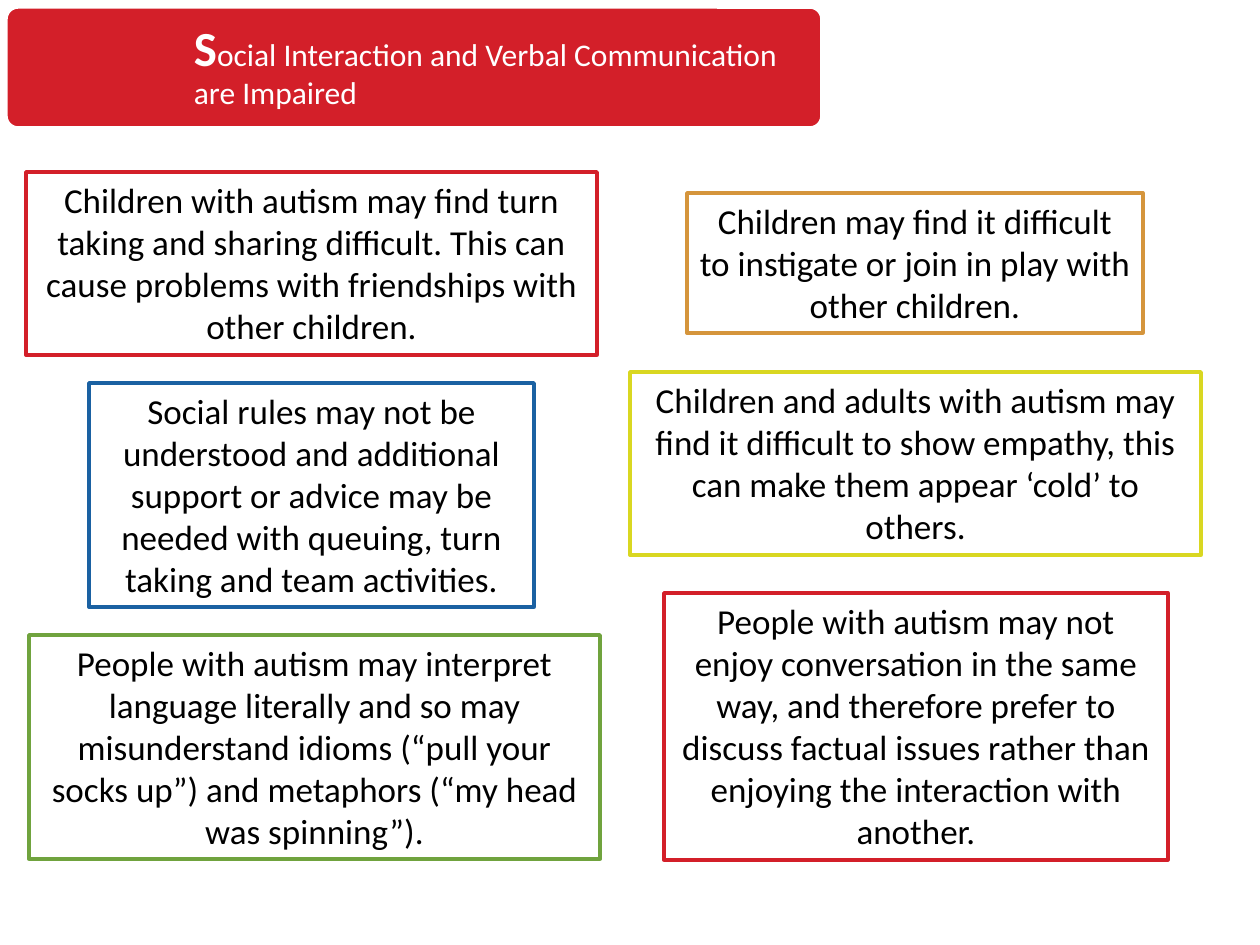
from typing import NamedTuple

from pptx import Presentation
from pptx.dml.color import RGBColor as RGB
from pptx.enum.shapes import MSO_SHAPE as Kind
from pptx.enum.text import MSO_ANCHOR as Anchor, PP_ALIGN as Align
from pptx.util import Emu, Pt

WHITE = RGB(0xFF, 0xFF, 0xFF)
BLACK = RGB(0x00, 0x00, 0x00)
RED = RGB(0xD3, 0x1F, 0x29)
BLUE = RGB(0x1A, 0x61, 0xA2)
GREEN = RGB(0x70, 0xA3, 0x3E)
ORANGE = RGB(0xD5, 0x95, 0x3C)
YELLOW = RGB(0xD9, 0xD7, 0x21)
SCALE = 914400 / 126


class Area(NamedTuple):
    left: int
    top: int
    width: int
    height: int


class Note(NamedTuple):
    area: Area
    edge: RGB
    text: str


NOTES = [
    Note(Area(89, 383, 445, 224), BLUE,
         "Social rules may not be understood and additional support or advice "
         "may be needed with queuing, turn taking and team activities."),
    Note(Area(29, 635, 571, 224), GREEN,
         "People with autism may interpret language literally and so may "
         "misunderstand idioms (“pull your socks up”) and metaphors "
         "(“my head was spinning”)."),
    Note(Area(26, 172, 571, 183), RED,
         "Children with autism may find turn taking and sharing difficult. "
         "This can cause problems with friendships with other children."),
    Note(Area(687, 193, 456, 140), ORANGE,
         "Children may find it difficult to instigate or join in play with "
         "other children."),
    Note(Area(630, 372, 571, 183), YELLOW,
         "Children and adults with autism may find it difficult to show "
         "empathy, this can make them appear ‘cold’ to others."),
    Note(Area(664, 593, 504, 267), RED,
         "People with autism may not enjoy conversation in the same way, and "
         "therefore prefer to discuss factual issues rather than enjoying the "
         "interaction with another."),
]


def px(size: int) -> Emu:
    return Emu(round(size * SCALE))


def place(area: Area) -> list[Emu]:
    return [px(size) for size in area]


def style(item, **form) -> None:
    for key, value in form.items():
        setattr(item, key, value)


def add_run(para, text: str, size: int, color: RGB, bold: bool = False) -> None:
    run = para.add_run()
    run.text = text
    style(run.font, name="Calibri", size=Pt(size), bold=bold)
    run.font.color.rgb = color


def add_box(shapes, kind: Kind, area: Area, fill: RGB, edge: RGB):
    box = shapes.add_shape(kind, *place(area))
    box.shadow.inherit = False
    box.fill.solid()
    box.fill.fore_color.rgb = fill
    box.line.color.rgb = edge
    box.line.width = Pt(2)
    return box


def add_note(shapes, note: Note) -> None:
    frame = add_box(shapes, Kind.RECTANGLE, note.area, WHITE, note.edge).text_frame
    style(frame, word_wrap=True, vertical_anchor=Anchor.TOP)
    para = frame.paragraphs[0]
    para.alignment = Align.CENTER
    add_run(para, note.text, 20, BLACK)


def add_title(shapes) -> None:
    group = shapes.add_group_shape().shapes
    bar = add_box(group, Kind.ROUNDED_RECTANGLE, Area(6, 7, 816, 121), RED, WHITE)
    bar.adjustments[0] = 0.1
    frame = group.add_textbox(*place(Area(179, 7, 644, 121))).text_frame
    pad = px(15)
    style(frame, word_wrap=True, vertical_anchor=Anchor.MIDDLE,
          margin_left=pad, margin_top=pad, margin_right=pad, margin_bottom=pad)
    para = frame.paragraphs[0]
    style(para, alignment=Align.LEFT, line_spacing=0.9)
    add_run(para, "S", 28, WHITE, True)
    add_run(para, "ocial Interaction and Verbal Communication are Impaired", 18, WHITE)


def main() -> None:
    deck = Presentation()
    style(deck, slide_width=px(1260), slide_height=px(945))
    shapes = deck.slides.add_slide(deck.slide_layouts[6]).shapes
    for note in NOTES:
        add_note(shapes, note)
    add_title(shapes)
    deck.save("out.pptx")


if __name__ == "__main__":
    main()
